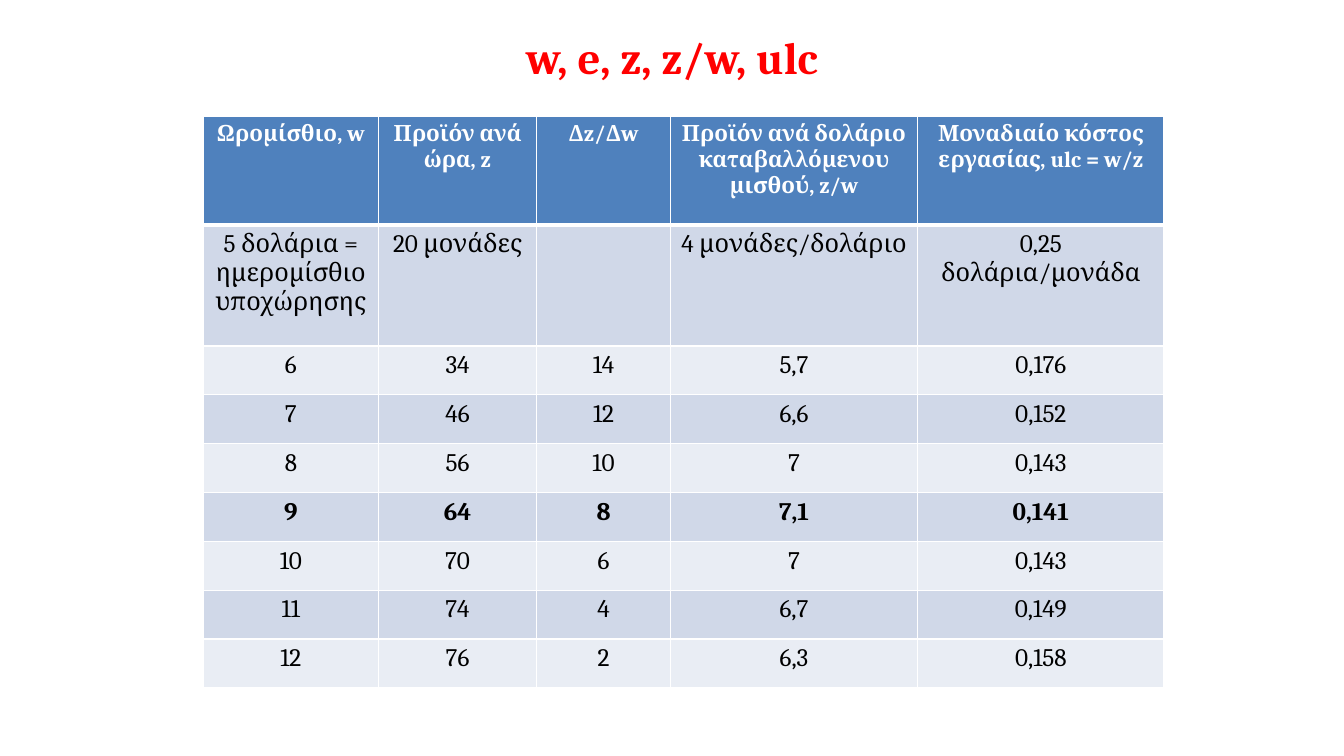
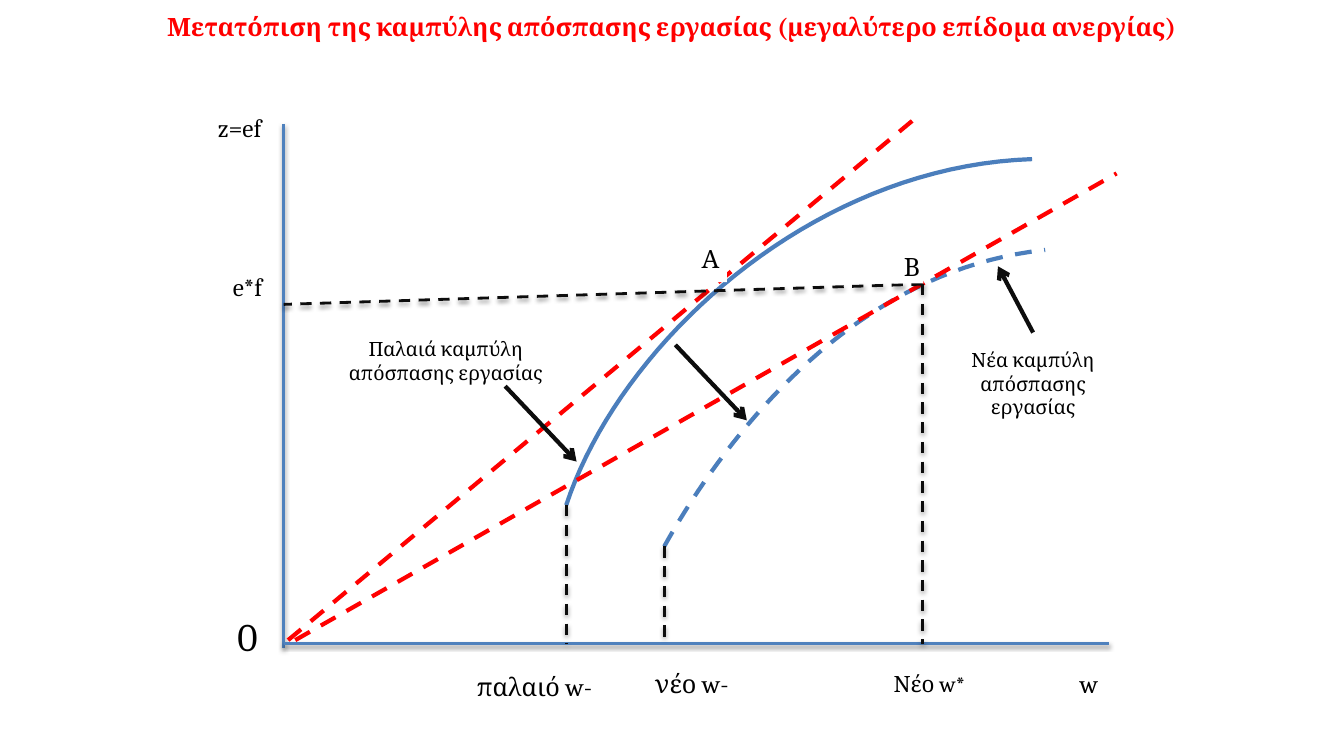
from lxml import etree
from pptx import Presentation
from pptx.dml.color import RGBColor
from pptx.enum.dml import MSO_LINE
from pptx.enum.shapes import MSO_CONNECTOR, MSO_SHAPE
from pptx.enum.text import MSO_ANCHOR, PP_ALIGN
from pptx.oxml import parse_xml
from pptx.oxml.ns import nsdecls, qn
from pptx.util import Cm, Pt

FONT = "Cambria"
COLORS = {
    "white": "FFFFFF", "black": "000000", "red": "FF0000", "ink": "0D0D0D",
    "header": "4F81BD", "band_dark": "D0D8E8", "band_light": "E9EDF4",
    "axis": "4F81BD", "curve": "4B7EBC",
}

# Titles: text, box (left, top, width, height in cm), size
WAGE_TITLE = ("w, e, z, z/w, ulc", (5.51, 0.53, 22.86, 1.8), 32)
SHIFT_TITLE = (
    "Μετατόπιση της καμπύλης απόσπασης εργασίας (μεγαλύτερο επίδομα ανεργίας)",
    (3.73, 0, 26.39, 1.32), 18)

# Wage table: the last three columns follow from the wage and the product
WAGE_HEADER = ("Ωρομίσθιο, w", "Προϊόν ανά ώρα, z", "Δz/Δw",
               "Προϊόν ανά δολάριο καταβαλλόμενου μισθού, z/w",
               "Μοναδιαίο κόστος εργασίας, ulc = w/z")
RESERVATION_ROW = ("5 δολάρια = ημερομίσθιο υποχώρησης", "20 μονάδες", "",
                   "4 μονάδες/δολάριο", "0,25 δολάρια/μονάδα")
RESERVATION_PRODUCT = 20
PRODUCT_BY_WAGE = {6: 34, 7: 46, 8: 56, 9: 64, 10: 70, 11: 74, 12: 76}
TABLE_LEFT, TABLE_TOP = 5.13, 2.94
COL_WIDTHS = [4.4, 4, 3.36, 6.24, 6.2]
HEADER_HEIGHT, RESERVATION_HEIGHT, ROW_HEIGHT = 2.73, 3.05, 1.23

# Diagram, in cm: each curve is a cubic Bézier with four control points
ORIGIN_X, ORIGIN_Y = 7.15, 16.22
AXIS_TOP, AXIS_RIGHT, AXIS_OVERHANG = 3.12, 27.94, 0.11
OLD_CURVE = [(14.27, 12.73), (15.6, 8.7), (20.4, 4.2), (26.01, 4.01)]
NEW_CURVE = [(16.74, 13.77), (18.4, 10.8), (21.6, 6.8), (26.34, 6.3)]
CURVE_STEPS = 40
POINT_B = (23.25, 7.16)
EFFORT_LEVEL = 7.67
RAYS = [((7.26, 16.13), (23.14, 2.92)), ((7.44, 16.13), (28.14, 4.37))]

# Arrows: start and run (across, down)
DOWN_RIGHT = (1.8, 1.9)
SHIFT_ARROW = ((17.02, 8.69), DOWN_RIGHT)
OLD_POINTER = ((12.73, 9.73), DOWN_RIGHT)
NEW_POINTER = ((26.03, 8.38), (-0.88, -1.67))

# Left of the vertical axis: text, top, width, height, size
LEFT_LABELS_RIGHT = 6.94
LEFT_LABELS = [
    ("z=ef", 2.32, 1.8, 1.8, 18),
    ("e*f", 6.73, 1.4, 0.99, 18),
    ("0", 15.38, 1.4, 1.3, 28),
]
# Below the horizontal axis: text, left, width, height, size
BOTTOM_LABELS_TOP = 16.72
BOTTOM_LABELS = [
    ("παλαιό w-", 11.73, 3.48, 1.17, 18),
    ("νέο w-", 16.14, 2.59, 0.99, 18),
    ("Νέο w*", 22.13, 2.59, 0.99, 16),
    ("w", 26.34, 2.21, 0.99, 18),
]
# Inside the diagram: text, box, size
POINT_LABELS = [
    ("Α", (17.43, 5.92, 0.89, 1.19), 18),
    ("Β", (22.53, 6.3, 0.74, 0.84), 18),
]
OLD_CURVE_LABEL = ("Παλαιά καμπύλη απόσπασης εργασίας",
                   (8.53, 7.93, 5.41, 2.31), 14)
NEW_CURVE_LABEL = ("Νέα καμπύλη απόσπασης εργασίας",
                   (23.94, 8.38, 4.19, 2.56), 14)


def rgb(name):
    return RGBColor.from_string(COLORS[name])


def cms(values):
    return [Cm(v) for v in values]


def write(tf, text, size=18, color="black", bold=False):
    tf.word_wrap = True
    p = tf.paragraphs[0]
    p.alignment = PP_ALIGN.CENTER
    r = p.add_run()
    r.text = text
    r.font.name = FONT
    r.font.size = Pt(size)
    r.font.bold = bold
    r.font.color.rgb = rgb(color)


def add_slide(prs, title):
    text, box, size = title
    s = prs.slides.add_slide(prs.slide_layouts[6])
    tf = s.shapes.add_textbox(*cms(box)).text_frame
    tf.vertical_anchor = MSO_ANCHOR.MIDDLE
    write(tf, text, size=size, color="red", bold=True)
    return s


def decimal(value, digits):
    """Format with a decimal comma, leaving out a zero fraction."""
    return f"{value:.{digits}f}".removesuffix(".0").replace(".", ",")


def wage_rows():
    rows = [WAGE_HEADER, RESERVATION_ROW]
    previous = RESERVATION_PRODUCT
    for wage, product in PRODUCT_BY_WAGE.items():
        rows.append((str(wage), str(product), str(product - previous),
                     decimal(product / wage, 1), decimal(wage / product, 3)))
        previous = product
    return rows


def set_borders(cell, **widths):
    """Draw white cell borders; widths in points by side (L, R, T, B)."""
    tc_pr = cell._tc.get_or_add_tcPr()
    for side, width in widths.items():
        tc_pr.append(parse_xml(
            f'<a:ln{side} {nsdecls("a")} w="{Pt(width)}"><a:solidFill>'
            f'<a:srgbClr val="{COLORS["white"]}"/></a:solidFill></a:ln{side}>'))


def add_wage_table(s):
    rows = wage_rows()
    heights = [HEADER_HEIGHT, RESERVATION_HEIGHT]
    heights += [ROW_HEIGHT] * len(PRODUCT_BY_WAGE)
    best_wage = max(PRODUCT_BY_WAGE, key=lambda w: PRODUCT_BY_WAGE[w] / w)
    table = s.shapes.add_table(
        len(rows), len(COL_WIDTHS), Cm(TABLE_LEFT), Cm(TABLE_TOP),
        Cm(sum(COL_WIDTHS)), Cm(sum(heights))).table
    for col, width in zip(table.columns, COL_WIDTHS):
        col.width = Cm(width)
    for i, (row, height, texts) in enumerate(zip(table.rows, heights, rows)):
        row.height = Cm(height)
        header = i == 0
        band = "header" if header else "band_dark" if i % 2 else "band_light"
        for cell, text in zip(row.cells, texts):
            set_borders(cell, L=1, R=1, T=3 if i == 1 else 1,
                        B=3 if header else 1)
            cell.fill.solid()
            cell.fill.fore_color.rgb = rgb(band)
            if text:
                write(cell.text_frame, text, size=16 if header else 18,
                      color="white" if header else "black",
                      bold=header or texts[0] == str(best_wage))


def style_line(line, color, width, dashed=False):
    line.color.rgb = rgb(color)
    line.width = Pt(width)
    if dashed:
        line.dash_style = MSO_LINE.DASH


def add_line(s, start, end, color, width, dashed=False, shadow=False):
    c = s.shapes.add_connector(MSO_CONNECTOR.STRAIGHT, *cms(start + end))
    style_line(c.line, color, width, dashed)
    effects = etree.SubElement(c._element.spPr, qn("a:effectLst"))
    if shadow:
        outer = etree.SubElement(
            effects, qn("a:outerShdw"), blurRad="40000", dist="20000",
            dir="5400000", rotWithShape="0")
        tint = etree.SubElement(outer, qn("a:srgbClr"), val=COLORS["black"])
        etree.SubElement(tint, qn("a:alpha"), val="38000")
    return c


def add_arrow(s, start, run):
    end = (start[0] + run[0], start[1] + run[1])
    c = add_line(s, start, end, "ink", 3)
    etree.SubElement(c.line._get_or_add_ln(), qn("a:tailEnd"), type="arrow")
    return c


def bezier(controls, t):
    """Return the point of a cubic Bézier at t, from 0 to 1."""
    u = 1 - t
    weights = (u**3, 3 * u**2 * t, 3 * u * t**2, t**3)
    return [sum(w * v for w, v in zip(weights, axis)) for axis in zip(*controls)]


def add_curve(s, controls, dashed=False):
    start, *rest = [cms(bezier(controls, i / CURVE_STEPS))
                    for i in range(CURVE_STEPS + 1)]
    builder = s.shapes.build_freeform(*start)
    builder.add_line_segments(rest, close=False)
    sp = builder.convert_to_shape()
    sp.shadow.inherit = False
    sp.fill.background()
    style_line(sp.line, "curve", 3, dashed)


def add_label(s, text, box, size):
    sp = s.shapes.add_shape(MSO_SHAPE.RECTANGLE, *cms(box))
    sp.shadow.inherit = False
    sp.fill.solid()
    sp.fill.fore_color.rgb = rgb("white")
    sp.line.fill.background()
    sp.text_frame.vertical_anchor = MSO_ANCHOR.MIDDLE
    write(sp.text_frame, text, size=size)
    return sp


def add_axes(s):
    add_line(s, (ORIGIN_X, AXIS_TOP), (ORIGIN_X, ORIGIN_Y + AXIS_OVERHANG),
             "axis", 2, shadow=True)
    add_line(s, (AXIS_RIGHT, ORIGIN_Y), (ORIGIN_X, ORIGIN_Y),
             "axis", 2, shadow=True)
    for text, top, width, height, size in LEFT_LABELS:
        add_label(s, text, (LEFT_LABELS_RIGHT - width, top, width, height), size)
    for text, left, width, height, size in BOTTOM_LABELS:
        add_label(s, text, (left, BOTTOM_LABELS_TOP, width, height), size)


def add_guides(s):
    """Drop dashed lines to the axes from B and from both curve starts."""
    feet = [(POINT_B, (ORIGIN_X, EFFORT_LEVEL))]
    for point in (POINT_B, OLD_CURVE[0], NEW_CURVE[0]):
        feet.append((point, (point[0], ORIGIN_Y)))
    for point, foot in feet:
        add_line(s, point, foot, "ink", 2, dashed=True, shadow=True)


def add_shift_diagram(s):
    add_axes(s)
    add_curve(s, OLD_CURVE)
    add_curve(s, NEW_CURVE, dashed=True)
    for start, end in RAYS:
        add_line(s, start, end, "red", 3, dashed=True)
    add_guides(s)
    for label in POINT_LABELS:
        add_label(s, *label)
    add_label(s, *OLD_CURVE_LABEL)
    new_label = add_label(s, *NEW_CURVE_LABEL)
    add_arrow(s, *SHIFT_ARROW)
    add_arrow(s, *OLD_POINTER)
    add_arrow(s, *NEW_POINTER).begin_connect(new_label, 0)


def main():
    prs = Presentation()
    prs.slide_width, prs.slide_height = Cm(33.87), Cm(19.05)
    add_wage_table(add_slide(prs, WAGE_TITLE))
    add_shift_diagram(add_slide(prs, SHIFT_TITLE))
    prs.save("out.pptx")


if __name__ == "__main__":
    main()
